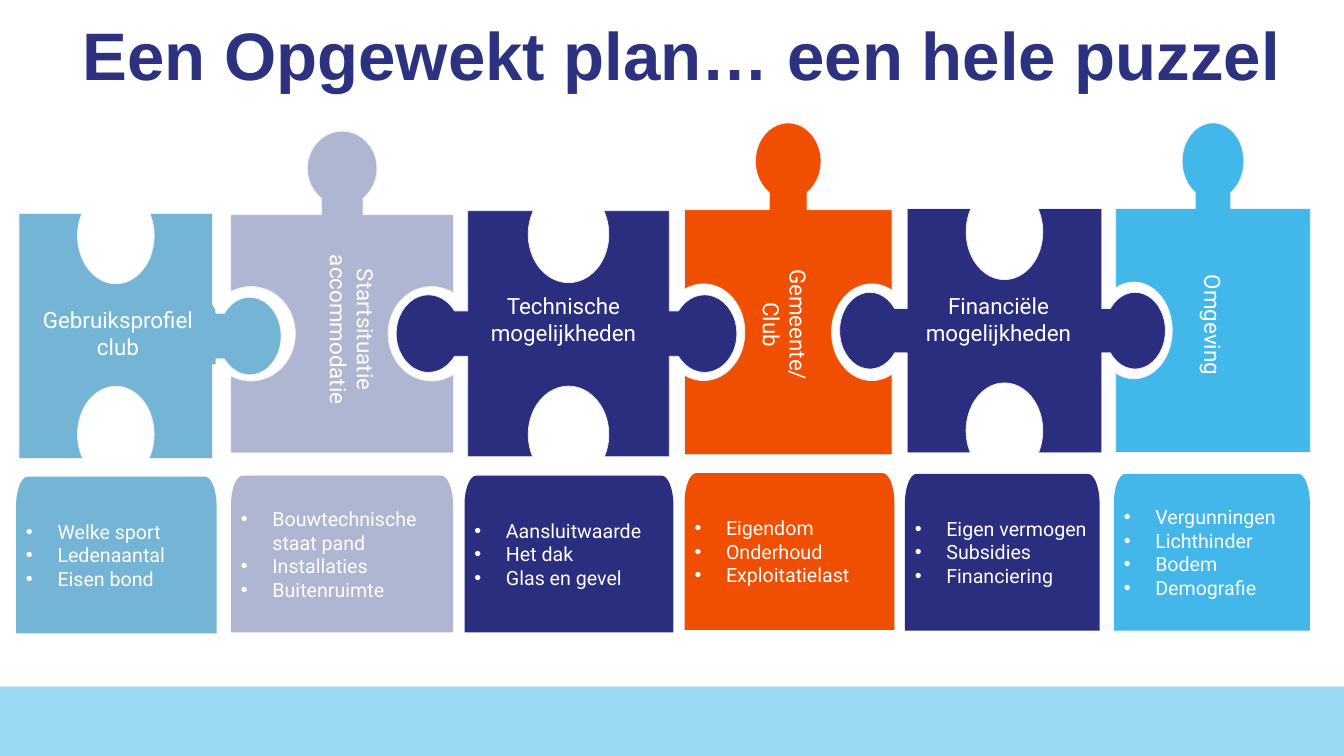
import math
from dataclasses import dataclass

from lxml import etree
from pptx import Presentation
from pptx.dml.color import RGBColor
from pptx.enum.shapes import MSO_SHAPE
from pptx.enum.text import MSO_ANCHOR, PP_ALIGN
from pptx.oxml.ns import qn
from pptx.util import Pt

LEFT, CENTER = PP_ALIGN.LEFT, PP_ALIGN.CENTER
TOP, MIDDLE = MSO_ANCHOR.TOP, MSO_ANCHOR.MIDDLE
RECTANGLE = MSO_SHAPE.RECTANGLE

WHITE, OUTLINE, TITLE_BLUE, BAND = "FFFFFF", "EDEFF7", "2C327F", "9CDAF4"
STEEL, LILAC, NAVY = "74B4D4", "AFB6D2", "2B2D7E"
ORANGE, SKY, SKY_CARD = "F04F01", "42B8EA", "43B7E9"
OUTWARD_ANGLE = {"top": 270, "right": 0, "bottom": 90, "left": 180}
INDENT = 22.5


@dataclass
class Knob:
    """A tab (offset > 0) or socket (offset < 0), centred on one side of a piece."""
    side: str
    offset: float
    radius_x: float
    radius_y: float
    neck: float = 0


# Body box and knobs; navy and steel tabs lie over the sockets.
PIECES = [
    (SKY, (797, 149, 139, 174.2),
     [Knob("top", 33.8, 22, 27.4, 12.6), Knob("left", -13, 27.4, 34.6)]),
    (LILAC, (164.9, 153.4, 159.1, 170),
     [Knob("top", 33.1, 24.8, 26.6, 14.8), Knob("right", -15.8, 31, 33.8),
      Knob("left", -14.4, 31.7, 33.8)]),
    (ORANGE, (488.9, 149.8, 148.3, 175),
     [Knob("top", 34.6, 23.4, 27.4, 13.5), Knob("right", -14.4, 28.8, 34.6),
      Knob("left", -13.7, 29.5, 34.6)]),
    (NAVY, (648, 149, 139, 174.5),
     [Knob("top", -16.6, 27.4, 34.2), Knob("right", 23.8, 21.6, 27.4, 15.8),
      Knob("bottom", -15.8, 27.4, 34.2), Knob("left", 26.6, 21.6, 27.4, 15.8)]),
    (NAVY, (334.1, 150.5, 144, 175.7),
     [Knob("top", -16.9, 28.8, 34.6), Knob("right", 25.2, 23, 27.7, 16.2),
      Knob("bottom", -15.8, 28.8, 34.6), Knob("left", 28.1, 23, 27.7, 16.2)]),
    (STEEL, (13.7, 152.6, 138.2, 175),
     [Knob("top", -15.8, 27.4, 34.4), Knob("right", 26.6, 22.3, 27.7, 16.2),
      Knob("bottom", -17.3, 27.4, 34.4)]),
]
LABELS = [
    (["Technische mogelijkheden"], (331.2, 205.2, 142.6, 46.1), 0),
    (["Financiële mogelijkheden"], (646.6, 205.2, 133.2, 46.1), 0),
    (["Startsituatie", "accommodatie"], (165.6, 212.4, 171.4, 46.1), 90),
    (["Gemeente/", "Club"], (491, 208.8, 139, 46.1), 90),
    (["Omgeving"], (789.8, 218.9, 153.4, 26.6), 90),
]
CARDS = [
    (STEEL, (11.5, 340.4, 143.2, 112), ["Welke sport", "Ledenaantal", "Eisen bond"]),
    (LILAC, (165, 339.7, 158.6, 112),
     ["Bouwtechnische staat pand", "Installaties", "Buitenruimte"]),
    (NAVY, (331.8, 339.7, 149.2, 112), ["Aansluitwaarde", "Het dak", "Glas en gevel"]),
    (ORANGE, (489, 337.9, 149.8, 112), ["Eigendom", "Onderhoud", "Exploitatielast"]),
    (NAVY, (646.4, 338.4, 139, 112), ["Eigen vermogen", "Subsidies", "Financiering"]),
    (SKY_CARD, (795.6, 338.4, 140, 112),
     ["Vergunningen", "Lichthinder", "Bodem", "Demografie"]),
]


def color(hex_string):
    return RGBColor.from_string(hex_string)


def style_shape(shape, fill, line=None):
    shape.shadow.inherit = False
    shape.fill.solid()
    shape.fill.fore_color.rgb = color(fill)
    if line:
        shape.line.color.rgb = color(line)
        shape.line.width = Pt(0.5)
    else:
        shape.line.fill.background()


def add_bullet(paragraph):
    properties = paragraph._p.get_or_add_pPr()
    properties.set("marL", str(Pt(INDENT)))
    properties.set("indent", str(-Pt(INDENT)))
    etree.SubElement(properties, qn("a:buFont")).set("typeface", "Arial")
    etree.SubElement(properties, qn("a:buChar")).set("char", "•")


def write_text(shape, lines, size=16, font="Roboto", fill=WHITE, bold=False,
               align=CENTER, anchor=TOP, bullets=False, spacing=None):
    frame = shape.text_frame
    frame.word_wrap = True
    frame.vertical_anchor = anchor
    for index, line in enumerate(lines):
        paragraph = frame.add_paragraph() if index else frame.paragraphs[0]
        paragraph.alignment = align
        if spacing:
            paragraph.line_spacing = spacing
        if bullets:
            add_bullet(paragraph)
        run = paragraph.add_run()
        run.text = line
        run.font.size = Pt(size)
        run.font.name = font
        run.font.bold = bold
        run.font.color.rgb = color(fill)


def add_label(slide, lines, box, rotation=0, **text_format):
    label = slide.shapes.add_textbox(*map(Pt, box))
    label.rotation = rotation
    write_text(label, lines, **text_format)


def arc(center_x, center_y, radius_x, radius_y, start, end, curves=4):
    """Segments of an elliptical arc: its start, then cubic curves of three points."""
    step = math.radians(end - start) / curves
    pull = 4 / 3 * math.tan(step / 4)

    def point(angle, tangent=0):
        return (center_x + radius_x * (math.cos(angle) - tangent * math.sin(angle)),
                center_y + radius_y * (math.sin(angle) + tangent * math.cos(angle)))

    angles = [math.radians(start) + step * i for i in range(curves + 1)]
    return [[point(angles[0])]] + [[point(a, pull), point(b, -pull), point(b)]
                                   for a, b in zip(angles, angles[1:])]


def add_outline(slide, segments, fill, line=None):
    """Draw segments of one point (straight) or three points (cubic curve)."""
    points = [(Pt(x), Pt(y)) for segment in segments for x, y in segment]
    builder = slide.shapes.build_freeform(*points[0], scale=1.0)
    builder.add_line_segments(points[1:], close=True)
    shape = builder.convert_to_shape()
    straight_lines = iter(list(shape._element.iter(qn("a:lnTo"))))
    for segment in segments[1:]:
        first, *others = [next(straight_lines) for _ in segment]
        if others:
            first.tag = qn("a:cubicBezTo")
        for other in others:
            first.append(other[0])
            other.getparent().remove(other)
    style_shape(shape, fill, line)
    return shape


def knob_segments(box, knob):
    left, top, width, height = box
    angle = OUTWARD_ANGLE[knob.side]
    out_x = round(math.cos(math.radians(angle)))
    out_y = round(math.sin(math.radians(angle)))
    edge_x = left + width / 2 * (1 + out_x)
    edge_y = top + height / 2 * (1 + out_y)
    ellipse = (edge_x + out_x * knob.offset, edge_y + out_y * knob.offset,
               knob.radius_x, knob.radius_y)
    along, across = knob.radius_x, knob.radius_y
    if out_y:
        along, across = across, along
    if knob.offset < 0:
        opening = math.degrees(math.acos(-knob.offset / along))
        return arc(*ellipse, angle - opening, angle + opening - 360)
    sweep = 180 - math.degrees(math.asin(knob.neck / across))
    neck_x, neck_y = -out_y * knob.neck, out_x * knob.neck
    return [[(edge_x - neck_x, edge_y - neck_y)],
            *arc(*ellipse, angle - sweep, angle + sweep),
            [(edge_x + neck_x, edge_y + neck_y)]]


def add_piece(slide, fill, box, knobs):
    left, top, width, height = box
    right, bottom = left + width, top + height
    corners = {"top": (left, top), "right": (right, top),
               "bottom": (right, bottom), "left": (left, bottom)}
    knob_by_side = {knob.side: knob for knob in knobs}
    segments = []
    for side, corner in corners.items():
        segments.append([corner])
        if side in knob_by_side:
            segments += knob_segments(box, knob_by_side[side])
    add_outline(slide, segments, fill, OUTLINE)


def add_card(slide, fill, box, lines, corner=(8.5, 20.9), **text_format):
    """A box with rounded top corners and vertically centred text."""
    left, top, width, height = box
    radius_x, radius_y = corner
    right, bottom = left + width, top + height
    segments = [[(left, bottom)],
                *arc(left + radius_x, top + radius_y, *corner, 180, 270, curves=1),
                *arc(right - radius_x, top + radius_y, *corner, 270, 360, curves=1),
                [(right, bottom)]]
    card = add_outline(slide, segments, fill)
    write_text(card, lines, anchor=MIDDLE, **text_format)


def main():
    presentation = Presentation()
    presentation.slide_width, presentation.slide_height = Pt(960), Pt(540)
    slide = presentation.slides.add_slide(presentation.slide_layouts[6])
    band = slide.shapes.add_shape(RECTANGLE, 0, Pt(490.4), Pt(960), Pt(49.6))
    style_shape(band, BAND)
    add_label(slide, ["Een Opgewekt plan… een hele puzzel"], (14.4, 11.5, 945.4, 61.2),
              size=48, font="Arial", fill=TITLE_BLUE, bold=True, anchor=MIDDLE,
              spacing=0.9)
    for piece in PIECES:
        add_piece(slide, *piece)
    add_card(slide, STEEL, (14.4, 215.3, 139.7, 45), ["Gebruiksprofiel club"],
             corner=(8.6, 8.6))
    for label in LABELS:
        add_label(slide, *label)
    for card in CARDS:
        add_card(slide, *card, size=14, align=LEFT, bullets=True)
    presentation.save("out.pptx")


if __name__ == "__main__":
    main()
